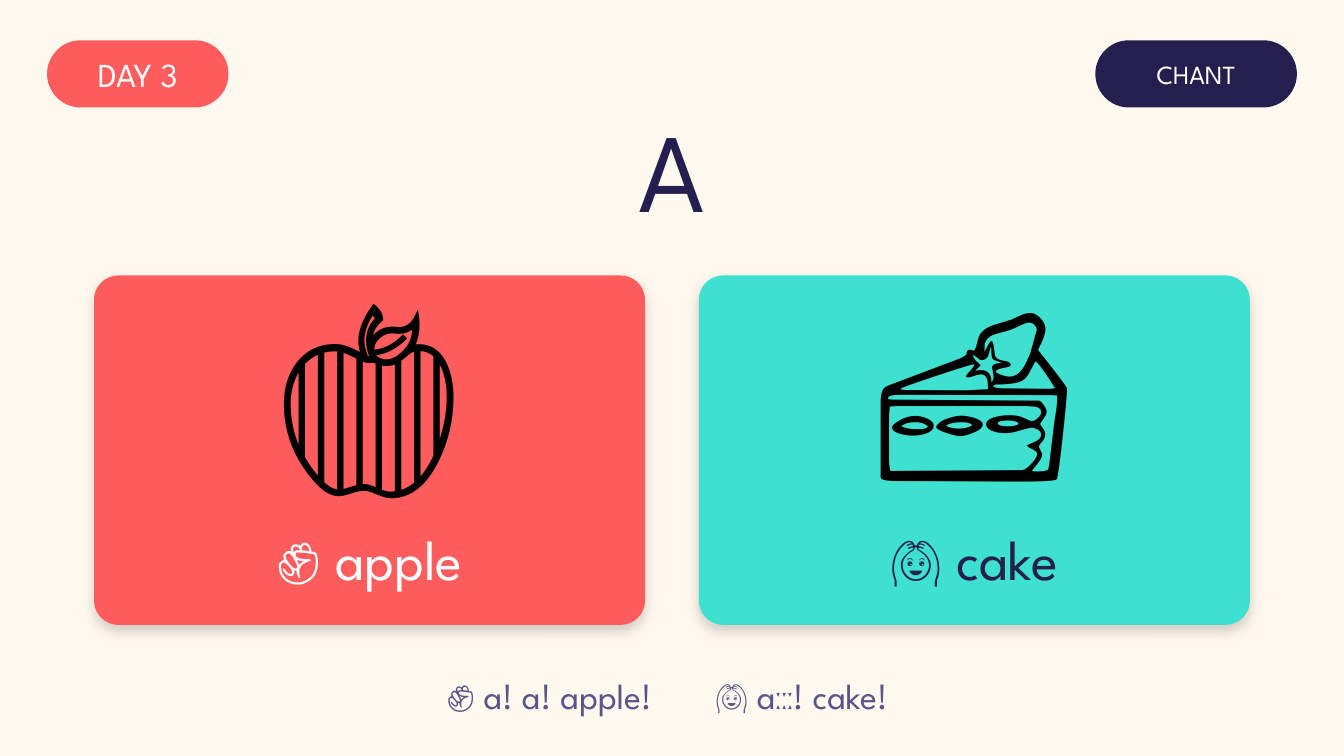
from dataclasses import dataclass
from lxml.etree import SubElement
from pptx import Presentation
from pptx.dml.color import RGBColor
from pptx.enum.shapes import MSO_SHAPE
from pptx.enum.text import MSO_ANCHOR, MSO_AUTO_SIZE, PP_ALIGN
from pptx.oxml.ns import qn
from pptx.util import Inches, Pt


@dataclass
class Theme:
    cream: str = "FFF9EF"
    coral: str = "FF5D5D"
    teal: str = "3EE0CF"
    navy: str = "241F4E"
    violet: str = "5A548A"
    white: str = "FFFFFF"
    black: str = "000000"
    font: str = "League Spartan"
    icon: str = "Calibri"
    day: int = 18
    tag: int = 14
    letter: int = 60
    art: int = 110
    word: int = 30
    chant: int = 19


theme = Theme()
deck = Presentation()
deck.slide_width = Inches(10)
deck.slide_height = deck.slide_width * 9 // 16
unit = deck.slide_width // 200
slide = deck.slides.add_slide(deck.slide_layouts[5])
slide.background.fill.solid()
slide.background.fill.fore_color.rgb = RGBColor.from_string(theme.cream)


def write(shape, text, size, color, font=theme.font, anchor=MSO_ANCHOR.MIDDLE):
    frame = shape.text_frame
    frame.text = text
    frame.word_wrap = True
    frame.auto_size = MSO_AUTO_SIZE.NONE
    frame.vertical_anchor = anchor
    line = frame.paragraphs[0]
    line.alignment = PP_ALIGN.CENTER
    for run in line.runs:
        run.font.name = font
        run.font.size = Pt(size)
        run.font.color.rgb = RGBColor.from_string(color)
    return line


def panel(box, fill, bend):
    shape = slide.shapes.add_shape(MSO_SHAPE.ROUNDED_RECTANGLE, *[n * unit for n in box])
    shape.adjustments[0] = bend
    shape.shadow.inherit = False
    shape.fill.solid()
    shape.fill.fore_color.rgb = RGBColor.from_string(fill)
    shape.line.fill.background()
    return shape


title = slide.shapes.title
title.left, title.top, title.width, title.height = 0, 16 * unit, 200 * unit, 18 * unit
write(title, "A", theme.letter, theme.navy)

for left, width, text, size, fill in (
    (7, 27, "DAY 3", theme.day, theme.coral),
    (163, 30, "CHANT", theme.tag, theme.navy),
):
    pill = panel((left, 6, width, 10), fill, 0.5)
    frame = pill.text_frame
    frame.margin_left = frame.margin_right = frame.margin_top = frame.margin_bottom = 0
    write(pill, text, size, theme.white)

wide, gap = 82, 8
edge = (200 - 2 * wide - gap) / 2
for col, (art, word, fill, ink) in enumerate((
    ("🍎", "✊ apple", theme.coral, theme.white),
    ("🍰", "🙆 cake", theme.teal, theme.navy),
)):
    left = int(edge + col * (wide + gap))
    card = panel((left, 41, wide, 52), fill, 0.07)
    glow = SubElement(
        card._element.spPr.find(qn("a:effectLst")), qn("a:outerShdw"),
        blurRad=str(Pt(8)), dist=str(Pt(3)), dir="5400000", rotWithShape="0",
    )
    tint = SubElement(glow, qn("a:srgbClr"), val=theme.black)
    SubElement(tint, qn("a:alpha"), val="18000")
    box = slide.shapes.add_textbox(left * unit, 37 * unit, wide * unit, 34 * unit)
    write(box, art, theme.art, theme.black, theme.icon, MSO_ANCHOR.TOP)
    box = slide.shapes.add_textbox(left * unit, 77 * unit, wide * unit, 12 * unit)
    write(box, word, theme.word, ink)

foot = slide.shapes.add_textbox(int(64.5 * unit), 99 * unit, 72 * unit, 9 * unit)
foot.text_frame.text = "✊ a! a! apple!\t🙆 aːːː! cake!"
stops = SubElement(foot.text_frame.paragraphs[0]._p.get_or_add_pPr(), qn("a:tabLst"))
SubElement(stops, qn("a:tab"), pos=str(41 * unit), algn="l")
line = write(foot, foot.text_frame.text, theme.chant, theme.violet)
line.alignment = PP_ALIGN.LEFT

deck.save("out.pptx")
